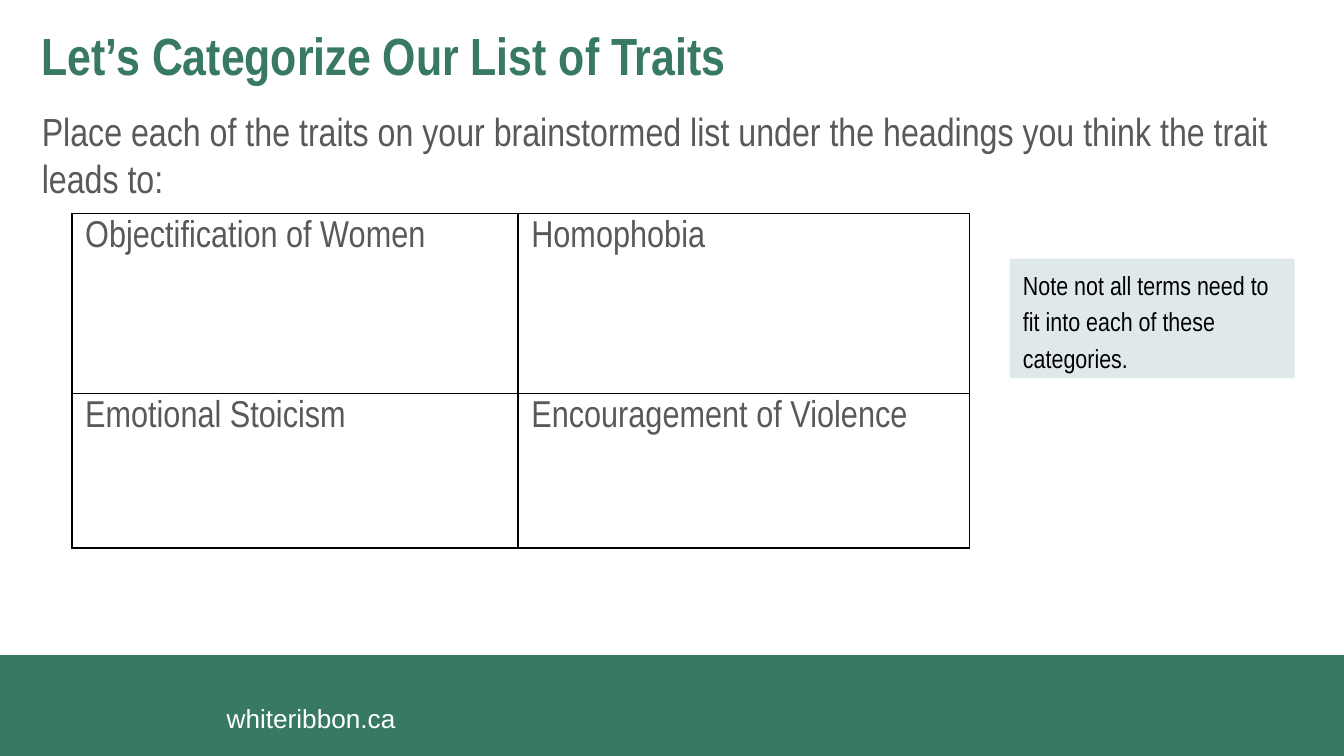
import pptx
import pptx.util
import pptx.dml.color
import pptx.enum.shapes
import pptx.enum.text
import pptx.oxml
import pptx.oxml.ns
import lxml.etree

HUES = {"green": "387966", "gray": "595959", "white": "FFFFFF",
        "black": "000000", "teal": "004B53"}
WIDE = 10
HIGH = WIDE * 9 / 16
NARROW = "Arial Narrow"

deck = pptx.Presentation()
deck.slide_width = pptx.util.Inches(WIDE)
deck.slide_height = pptx.util.Inches(HIGH)
slide = deck.slides.add_slide(deck.slide_layouts[6])


def place(left, top, width, height):
    shares = (left * WIDE, top * HIGH, width * WIDE, height * HIGH)
    return [pptx.util.Inches(share / 100) for share in shares]


def write(frame, words, face, size, hue, bold=False, space=1.0, pad=0.1):
    inset = pptx.util.Inches(pad)
    look = {"word_wrap": True, "margin_top": inset, "margin_bottom": inset,
            "margin_left": pptx.util.Inches(0.1),
            "margin_right": pptx.util.Inches(0.1),
            "vertical_anchor": pptx.enum.text.MSO_ANCHOR.TOP}
    for key, value in look.items():
        setattr(frame, key, value)
    line = frame.paragraphs[0]
    line.alignment = pptx.enum.text.PP_ALIGN.LEFT
    line.line_spacing = space
    run = line.add_run()
    run.text = words
    look = {"name": face, "size": pptx.util.Pt(size), "bold": bold}
    for key, value in look.items():
        setattr(run.font, key, value)
    run.font.color.rgb = pptx.dml.color.RGBColor.from_string(HUES[hue])


blocks = {}
for name, hue, area in (
    ("band", "green", (0, 86.76, 100, 13.24)),
    ("note", "teal", (75.13, 34.2, 21.2, 15.84)),
):
    block = slide.shapes.add_shape(
        pptx.enum.shapes.MSO_SHAPE.RECTANGLE, *place(*area))
    block.shadow.inherit = False
    block.fill.solid()
    block.fill.fore_color.rgb = pptx.dml.color.RGBColor.from_string(HUES[hue])
    block.line.fill.background()
    blocks[name] = block

edge = blocks["band"].line
edge.color.rgb = pptx.dml.color.RGBColor.from_string(HUES["green"])
edge.width = pptx.util.Pt(0.75)

note = blocks["note"]
tint = note._element.spPr.find(".//" + pptx.oxml.ns.qn("a:srgbClr"))
lxml.etree.SubElement(tint, pptx.oxml.ns.qn("a:alpha"), val="12000")
write(note.text_frame,
      "Note not all terms need to fit into each of these categories.",
      NARROW, 14, "black", space=1.15, pad=0.05)

for area, words, face, size, hue, bold in (
    ((15.88, 91.1, 15.4, 6.58), "whiteribbon.ca", "Arial", 14, "white", False),
    ((2.13, 12.44, 98.6, 66.49),
     "Place each of the traits on your brainstormed list under the headings "
     "you think the trait leads to:", NARROW, 21, "gray", False),
    ((2.13, 1.25, 93.2, 11.2), "Let’s Categorize Our List of Traits",
     NARROW, 28, "green", True),
):
    box = slide.shapes.add_textbox(*place(*area))
    write(box.text_frame, words, face, size, hue, bold)

traits = (("Objectification of Women", "Homophobia"),
          ("Emotional Stoicism", "Encouragement of Violence"))
grid = slide.shapes.add_table(2, 2, *place(5.34, 28.22, 66.8, 44.27)).table
for col, width in zip(grid.columns, (3.32, 3.36)):
    col.width = pptx.util.Inches(width)
for row, height in zip(grid.rows, (1.34, 1.15)):
    row.height = pptx.util.Inches(height)

for r, row in enumerate(traits):
    for c, trait in enumerate(row):
        cell = grid.cell(r, c)
        write(cell.text_frame, trait, NARROW, 20, "gray")
        rim = {"margin_left": 0.1, "margin_right": 0.1,
               "margin_top": 0.05, "margin_bottom": 0.05}
        for key, value in rim.items():
            setattr(cell, key, pptx.util.Inches(value))
        for side in ("lnL", "lnR", "lnT", "lnB"):
            cell._tc.get_or_add_tcPr().append(pptx.oxml.parse_xml(
                f'<a:{side} {pptx.oxml.ns.nsdecls("a")} w="12700"><a:solidFill>'
                f'<a:srgbClr val="{HUES["black"]}"/></a:solidFill></a:{side}>'))
        cell.fill.background()

deck.save("out.pptx")
